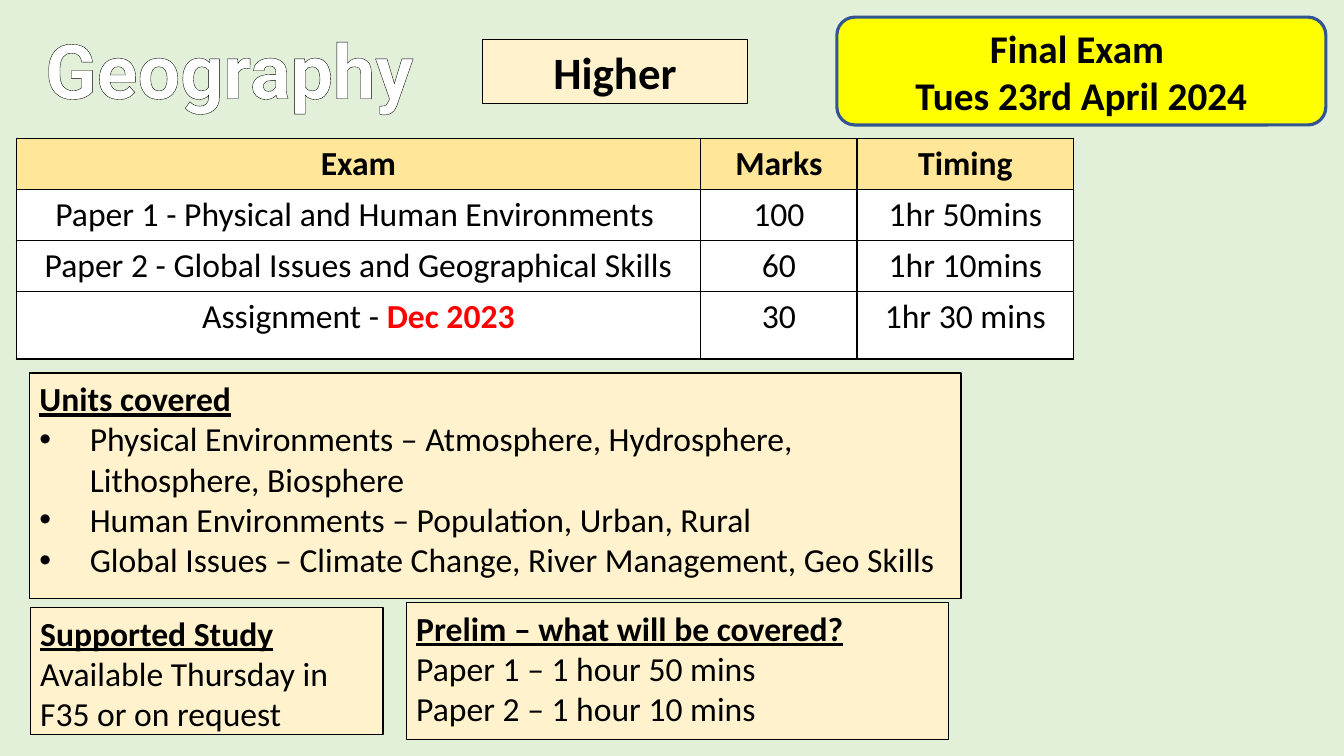
from dataclasses import dataclass

from lxml import etree
from pptx import Presentation
from pptx.dml.color import RGBColor
from pptx.enum.shapes import MSO_SHAPE
from pptx.enum.text import MSO_ANCHOR, MSO_AUTO_SIZE, PP_ALIGN
from pptx.oxml.ns import qn
from pptx.util import Inches, Pt

RECT, ROUNDED = MSO_SHAPE.RECTANGLE, MSO_SHAPE.ROUNDED_RECTANGLE
LEFT, CENTER = PP_ALIGN.LEFT, PP_ALIGN.CENTER
TOP, MIDDLE = MSO_ANCHOR.TOP, MSO_ANCHOR.MIDDLE
NO_FIT = MSO_AUTO_SIZE.NONE


@dataclass(frozen=True)
class Theme:
    font: str = "Calibri"
    title_font: str = "Roboto"
    background: str = "E2F0D9"
    panel: str = "FFF2CC"
    header: str = "FFE699"
    highlight: str = "FFFF00"
    highlight_line: str = "325491"
    white: str = "FFFFFF"
    ink: str = "000000"
    alert: str = "FF0000"
    title_size: int = 54
    level_size: int = 32
    date_size: int = 28
    body_size: int = 24


class CourseSlide:
    def __init__(self, slide, theme):
        self.slide = slide
        self.theme = theme
        slide.background.fill.solid()
        slide.background.fill.fore_color.rgb = RGBColor.from_string(theme.background)

    def place(self, shape, box):
        shape.left, shape.top, shape.width, shape.height = map(Inches, box)

    def paint(self, shape, fill, line, width):
        shape.fill.solid()
        shape.fill.fore_color.rgb = RGBColor.from_string(fill)
        shape.line.color.rgb = RGBColor.from_string(line)
        shape.line.width = Pt(width)

    def frame(self, shape, anchor=TOP):
        frame = shape.text_frame
        frame.word_wrap = True
        frame.auto_size = NO_FIT
        frame.vertical_anchor = anchor
        return frame

    def add_run(self, paragraph, text, size=None, bold=False, underline=False,
                color=None, font=None):
        run = paragraph.add_run()
        run.text = text
        run.font.name = font or self.theme.font
        run.font.size = Pt(size or self.theme.body_size)
        run.font.bold = bold
        run.font.underline = underline
        run.font.color.rgb = RGBColor.from_string(color or self.theme.ink)
        return run

    def add_lines(self, frame, lines, align=LEFT, **style):
        for number, line in enumerate(lines):
            paragraph = frame.paragraphs[0] if number == 0 else frame.add_paragraph()
            paragraph.alignment = align
            self.add_run(paragraph, line, **style)

    def add_title(self, text, box, outline):
        title = self.slide.shapes.title
        self.place(title, box)
        paragraph = self.frame(title).paragraphs[0]
        paragraph.alignment = CENTER
        run = self.add_run(paragraph, text, self.theme.title_size, True,
                           color=self.theme.white, font=self.theme.title_font)
        # Letter outline
        line = etree.Element(qn("a:ln"), w=str(Pt(outline)))
        fill = etree.SubElement(line, qn("a:solidFill"))
        etree.SubElement(fill, qn("a:srgbClr"), val=self.theme.ink)
        run.font._element.insert(0, line)

    def add_box(self, box, fill, line, width, kind=RECT, anchor=TOP):
        shape = self.slide.shapes.add_shape(kind, *map(Inches, box))
        shape.shadow.inherit = False
        self.paint(shape, fill, line, width)
        return self.frame(shape, anchor)

    def add_label(self, lines, box, size, fill, line, width, kind=RECT, anchor=TOP):
        frame = self.add_box(box, fill, line, width, kind, anchor)
        self.add_lines(frame, lines, CENTER, size=size, bold=True)

    def add_panel(self, heading, details, box):
        frame = self.add_box(box, self.theme.panel, self.theme.ink, 1)
        self.add_lines(frame, [heading], bold=True, underline=True)
        for detail in details:
            self.add_run(frame.add_paragraph(), detail)
        for paragraph in frame.paragraphs:
            paragraph.alignment = LEFT

    def add_list(self, heading, items, box):
        body = self.slide.placeholders[1]
        self.place(body, box)
        self.paint(body, self.theme.panel, self.theme.ink, 1)
        frame = self.frame(body)
        self.add_lines(frame, [heading], bold=True, underline=True)
        for item in items:
            self.add_run(frame.add_paragraph(), item)
        for number, paragraph in enumerate(frame.paragraphs):
            paragraph.space_before = Pt(0)
            paragraph.line_spacing = 1.0
            properties = paragraph._p.get_or_add_pPr()
            indent = Inches(0.5) if number else 0
            properties.set("marL", str(indent))
            properties.set("indent", str(-indent))
            if number:
                etree.SubElement(properties, qn("a:buFont"), typeface="Arial")
                etree.SubElement(properties, qn("a:buChar"), char="•")
            else:
                etree.SubElement(properties, qn("a:buNone"))

    def add_table(self, rows, left, top, widths, heights):
        table = self.slide.shapes.add_table(
            len(rows), len(widths), Inches(left), Inches(top),
            Inches(sum(widths)), Inches(sum(heights))).table
        for column, width in zip(table.columns, widths):
            column.width = Inches(width)
        for row, height in zip(table.rows, heights):
            row.height = Inches(height)
        for r, row in enumerate(rows):
            for c, runs in enumerate(row):
                self.fill_cell(table.cell(r, c), runs, is_header=r == 0)

    def fill_cell(self, cell, runs, is_header):
        properties = cell._tc.get_or_add_tcPr()
        for side in ("lnL", "lnR", "lnT", "lnB"):
            border = etree.SubElement(properties, qn(f"a:{side}"), w=str(Pt(1)))
            fill = etree.SubElement(border, qn("a:solidFill"))
            etree.SubElement(fill, qn("a:srgbClr"), val=self.theme.ink)
        cell.fill.solid()
        color = self.theme.header if is_header else self.theme.white
        cell.fill.fore_color.rgb = RGBColor.from_string(color)
        paragraph = cell.text_frame.paragraphs[0]
        paragraph.alignment = CENTER
        plain, *alerts = runs
        self.add_run(paragraph, plain, bold=is_header)
        for alert in alerts:
            self.add_run(paragraph, alert, bold=True, color=self.theme.alert)


def main():
    presentation = Presentation()
    presentation.slide_width, presentation.slide_height = Inches(13.33), Inches(7.5)
    theme = Theme()
    page = CourseSlide(presentation.slides.add_slide(presentation.slide_layouts[1]), theme)

    # Subject, level and exam date
    page.add_title("Geography", (-0.52, 0.18, 5.59, 1.01), outline=2.25)
    page.add_label(["Higher"], (4.79, 0.39, 2.62, 0.64), theme.level_size,
                   theme.panel, theme.ink, 0.75)
    page.add_label(["Final Exam ", "Tues 23rd April 2024"], (8.3, 0.17, 4.85, 1.07),
                   theme.date_size, theme.highlight, theme.highlight_line, 2.25,
                   ROUNDED, MIDDLE)

    # Exam papers; a second text in a cell is an alert
    exam_rows = [
        [["Exam"], ["Marks"], ["Timing"]],
        [["Paper 1 - Physical and Human Environments "], ["100"], ["1hr 50mins"]],
        [["Paper 2 - Global Issues and Geographical Skills"], ["60"], ["1hr 10mins"]],
        [["Assignment - ", "Dec 2023"], ["30"], ["1hr 30 mins"]],
    ]
    page.add_table(exam_rows, 0.16, 1.37, [6.79, 1.55, 2.15], [0.5, 0.5, 0.5, 0.67])

    # Units
    page.add_list("Units covered", [
        "Physical Environments – Atmosphere, Hydrosphere, Lithosphere, Biosphere",
        "Human Environments – Population, Urban, Rural",
        "Global Issues – Climate Change, River Management, Geo Skills",
    ], (0.29, 3.7, 9.24, 2.24))

    # Study support and prelim
    page.add_panel("Supported Study", ["Available Thursday in F35 or on request"],
                   (0.3, 6.03, 3.5, 1.26))
    page.add_panel("Prelim – what will be covered?",
                   ["Paper 1 – 1 hour 50 mins", "Paper 2 – 1 hour 10 mins"],
                   (4.03, 5.98, 5.38, 1.36))

    presentation.save("out.pptx")


if __name__ == "__main__":
    main()
